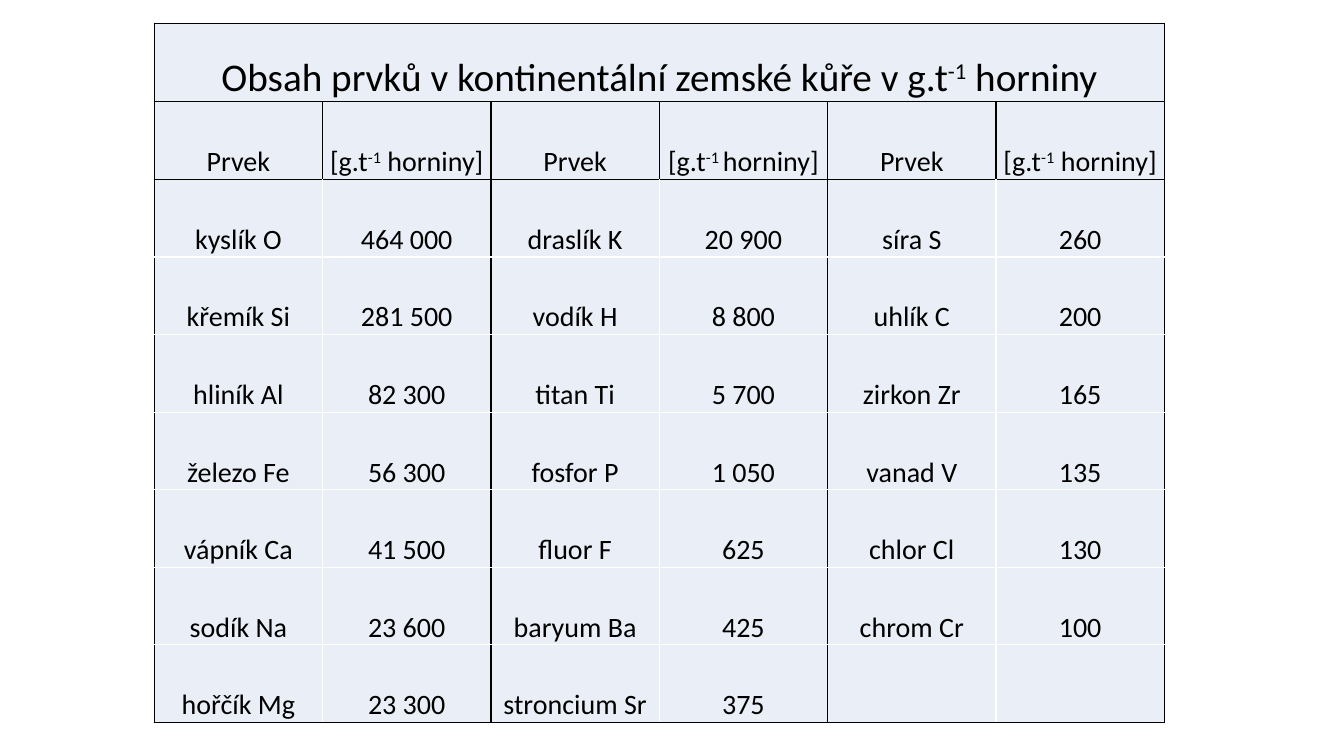
from lxml.etree import SubElement as Sub
from pptx import Presentation
from pptx.dml.color import RGBColor
from pptx.enum.text import MSO_ANCHOR as Anchor, PP_ALIGN as Align
from pptx.oxml.ns import qn
from pptx.util import Inches, Pt

BLACK = RGBColor(0x00, 0x00, 0x00)
WHITE = RGBColor(0xFF, 0xFF, 0xFF)
PALE = RGBColor(0xEA, 0xEF, 0xF7)

TITLE = "Obsah prvků v kontinentální zemské kůře v g.t^-1^ horniny"
UNIT = "[g.t^-1^ horniny]"
HEADS = ["Prvek", UNIT, "Prvek", "[g.t^-1 ^horniny]", "Prvek", UNIT]
ROWS = [
    ["kyslík O", "464 000", "draslík K", "20 900", "síra S", "260"],
    ["křemík Si", "281 500", "vodík H", "8 800", "uhlík C", "200"],
    ["hliník Al", "82 300", "titan Ti", "5 700", "zirkon Zr", "165"],
    ["železo Fe", "56 300", "fosfor P", "1 050", "vanad V", "135"],
    ["vápník Ca", "41 500", "fluor F", "625", "chlor Cl", "130"],
    ["sodík Na", "23 600", "baryum Ba", "425", "chrom Cr", "100"],
    ["hořčík Mg", "23 300", "stroncium Sr", "375", "", ""],
]
GRID = [[TITLE] + [""] * 5, HEADS] + ROWS

CELL = {
    "vertical_anchor": Anchor.BOTTOM,
    "margin_left": Inches(0.05),
    "margin_right": Inches(0.05),
    "margin_top": 0,
    "margin_bottom": 0,
}


def apply(item, style):
    for name, value in style.items():
        setattr(item, name, value)


def write(cell, text, size):
    para = cell.text_frame.paragraphs[0]
    para.alignment = Align.CENTER
    for i, part in enumerate(text.split("^")):
        if not part:
            continue
        run = para.add_run()
        run.text = part
        apply(run.font, {"name": "Calibri", "size": Pt(size)})
        run.font.color.rgb = BLACK
        if i % 2:
            run.font._element.set("baseline", "30000")


def edge(cell, row, col):
    head = row < 2
    dark = {
        "L": head or col % 2 == 0,
        "R": head or col % 2 == 1,
        "T": row <= 2,
        "B": head or row == len(GRID) - 1,
    }
    props = cell._tc.get_or_add_tcPr()
    for side, black in dark.items():
        line = Sub(props, qn("a:ln" + side), w=str(Pt(1)))
        fill = Sub(line, qn("a:solidFill"))
        Sub(fill, qn("a:srgbClr"), val=str(BLACK if black else WHITE))


def add_grid(slide):
    frame = slide.shapes.add_table(
        len(GRID), len(HEADS),
        Inches(1.53), Inches(0.23), Inches(10.02), Inches(6.94))
    table = frame.table
    apply(table, {"first_row": False, "horz_banding": False})
    for col in table.columns:
        col.width = Inches(1.67)
    for i, row in enumerate(table.rows):
        row.height = Inches(0.77 if i else 0.78)
    table.cell(0, 0).merge(table.cell(0, len(HEADS) - 1))
    for i, texts in enumerate(GRID):
        for j, text in enumerate(texts):
            cell = table.cell(i, j)
            apply(cell, CELL)
            edge(cell, i, j)
            cell.fill.solid()
            cell.fill.fore_color.rgb = PALE
            write(cell, text, 20 if i else 28)


def main():
    deck = Presentation()
    apply(deck, {"slide_width": Inches(13.33), "slide_height": Inches(7.5)})
    add_grid(deck.slides.add_slide(deck.slide_layouts[6]))
    deck.save("out.pptx")


if __name__ == "__main__":
    main()
